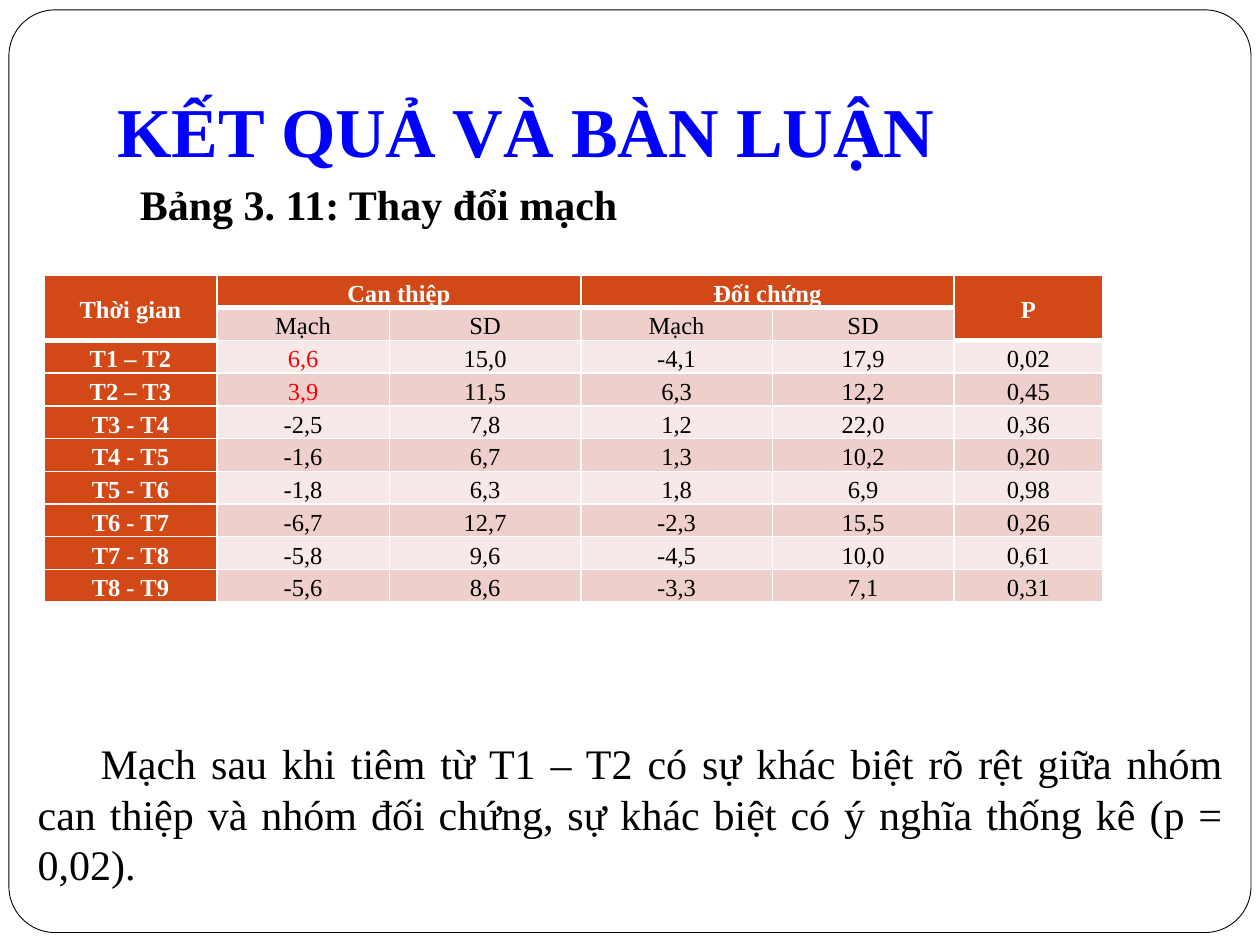
import pptx
import pptx.util
import pptx.dml.color
import pptx.enum.shapes
import pptx.enum.text
import pptx.oxml
import pptx.oxml.ns

Cm, Pt = pptx.util.Cm, pptx.util.Pt
ALIGN, ANCHOR = pptx.enum.text.PP_ALIGN, pptx.enum.text.MSO_ANCHOR

# Content
TITLE = "KẾT QUẢ VÀ BÀN LUẬN"
CAPTION = "Bảng 3. 11: Thay đổi mạch"
CONCLUSION = ("Mạch sau khi tiêm từ T1 – T2 có sự khác biệt rõ rệt giữa nhóm can thiệp "
              "và nhóm đối chứng, sự khác biệt có ý nghĩa thống kê (p = 0,02).")
ROWS = [
    ("Thời gian", "Can thiệp", "", "Đối chứng", "", "P"),
    ("", "Mạch", "SD", "Mạch", "SD", ""),
    ("T1 – T2", "6,6", "15,0", "-4,1", "17,9", "0,02"),
    ("T2 – T3", "3,9", "11,5", "6,3", "12,2", "0,45"),
    ("T3 - T4", "-2,5", "7,8", "1,2", "22,0", "0,36"),
    ("T4 - T5", "-1,6", "6,7", "1,3", "10,2", "0,20"),
    ("T5 - T6", "-1,8", "6,3", "1,8", "6,9", "0,98"),
    ("T6 - T7", "-6,7", "12,7", "-2,3", "15,5", "0,26"),
    ("T7 - T8", "-5,8", "9,6", "-4,5", "10,0", "0,61"),
    ("T8 - T9", "-5,6", "8,6", "-3,3", "7,1", "0,31"),
]
MERGES = [((0, 0), (1, 0)), ((0, 1), (0, 2)), ((0, 3), (0, 4)), ((0, 5), (1, 5))]
HIGHLIGHTS = {(2, 1), (3, 1)}
COLUMN_WIDTHS = [3.48, 3.48, 3.86, 3.86, 3.66, 3.0]
ROW_HEIGHT = 0.66

THEME = {
    "font": "Times New Roman",
    "title_size": 40, "text_size": 24, "table_size": 14,
    "title": "0000FF", "text": "000000", "paper": "FFFFFF",
    "header": "D34817", "bands": ("F7E9E8", "EFCFCC"), "highlight": "FF0000",
    "thin": 1, "thick": 3,
}


def color(name):
    return pptx.dml.color.RGBColor.from_string(name)


def style(paragraph, size, text_color, bold, alignment):
    font = paragraph.font
    font.name, font.size, font.bold = THEME["font"], Pt(size), bold
    font.color.rgb = color(text_color)
    paragraph.alignment = alignment


def add_text(slide, text, left, top, width, height, bold, anchor):
    frame = slide.shapes.add_textbox(Cm(left), Cm(top), Cm(width), Cm(height)).text_frame
    frame.word_wrap = True
    frame.vertical_anchor = anchor
    frame.text = text
    paragraph = frame.paragraphs[0]
    style(paragraph, THEME["text_size"], THEME["text"], bold, ALIGN.JUSTIFY)
    paragraph._p.get_or_add_pPr().set("indent", str(Cm(1.27)))


def is_top_header(row, column):
    return row == 0 or (row == 1 and column in (0, 5))


def set_borders(cell, row, column):
    header = is_top_header(row, column)
    below_header = row > 0 and is_top_header(row - 1, column) and not header
    widths = {"L": THEME["thin"], "R": THEME["thin"],
              "T": THEME["thick"] if below_header else THEME["thin"],
              "B": THEME["thick"] if header else THEME["thin"]}
    properties = cell._tc.get_or_add_tcPr()
    for side, width in widths.items():
        properties.append(pptx.oxml.parse_xml(
            f'<a:ln{side} {pptx.oxml.ns.nsdecls("a")} w="{Pt(width)}"><a:solidFill>'
            f'<a:srgbClr val="{THEME["paper"]}"/></a:solidFill></a:ln{side}>'))


def format_cell(cell, row, column):
    header = column == 0 or is_top_header(row, column)
    text_color = THEME["paper"] if header else THEME["text"]
    if (row, column) in HIGHLIGHTS:
        text_color = THEME["highlight"]
    cell.text = ROWS[row][column]
    cell.vertical_anchor = ANCHOR.MIDDLE
    cell.margin_left = cell.margin_right = Cm(0.18)
    cell.margin_top = cell.margin_bottom = 0
    paragraph = cell.text_frame.paragraphs[0]
    style(paragraph, THEME["table_size"], text_color, header, ALIGN.CENTER)
    paragraph.line_spacing = 1.2
    paragraph.space_before = Pt(5)
    set_borders(cell, row, column)
    cell.fill.solid()
    cell.fill.fore_color.rgb = color(THEME["header"] if header else THEME["bands"][row % 2])


presentation = pptx.Presentation()
presentation.slide_width, presentation.slide_height = Cm(25.4), Cm(19.05)
slide = presentation.slides.add_slide(presentation.slide_layouts[5])

# Rounded page frame, sent behind everything else
page = slide.shapes.add_shape(pptx.enum.shapes.MSO_SHAPE.ROUNDED_RECTANGLE,
                              Cm(0.18), Cm(0.2), Cm(25.04), Cm(18.6))
page.adjustments[0] = 0.05
page.shadow.inherit = False
page.fill.solid()
page.fill.fore_color.rgb = color(THEME["paper"])
page.line.color.rgb = color(THEME["text"])
page.line.width = Pt(0.5)
slide.shapes._spTree.insert(2, page._element)

# Title
title = slide.shapes.title
title.left, title.top, title.width, title.height = Cm(2.11), Cm(0.53), Cm(21.59), Cm(3.18)
title.text_frame.text = TITLE
title.text_frame.auto_size = pptx.enum.text.MSO_AUTO_SIZE.NONE
title.text_frame.vertical_anchor = ANCHOR.BOTTOM
title.text_frame.margin_bottom = Cm(0.25)
style(title.text_frame.paragraphs[0], THEME["title_size"], THEME["title"], True, ALIGN.LEFT)

# Table of pulse changes
table = slide.shapes.add_table(len(ROWS), len(COLUMN_WIDTHS), Cm(0.89), Cm(5.54),
                               Cm(sum(COLUMN_WIDTHS)), Cm(ROW_HEIGHT * len(ROWS))).table
for column, width in zip(table.columns, COLUMN_WIDTHS):
    column.width = Cm(width)
for row_index, row in enumerate(table.rows):
    row.height = Cm(ROW_HEIGHT)
    for column_index, cell in enumerate(row.cells):
        format_cell(cell, row_index, column_index)
for first, last in MERGES:
    table.cell(*first).merge(table.cell(*last))

# Conclusion and table caption
add_text(slide, CONCLUSION, 0.51, 14.73, 24.4, 3.33, False, ANCHOR.MIDDLE)
add_text(slide, CAPTION, 1.3, 3.48, 21.41, 1.27, True, ANCHOR.TOP)

presentation.save("out.pptx")
